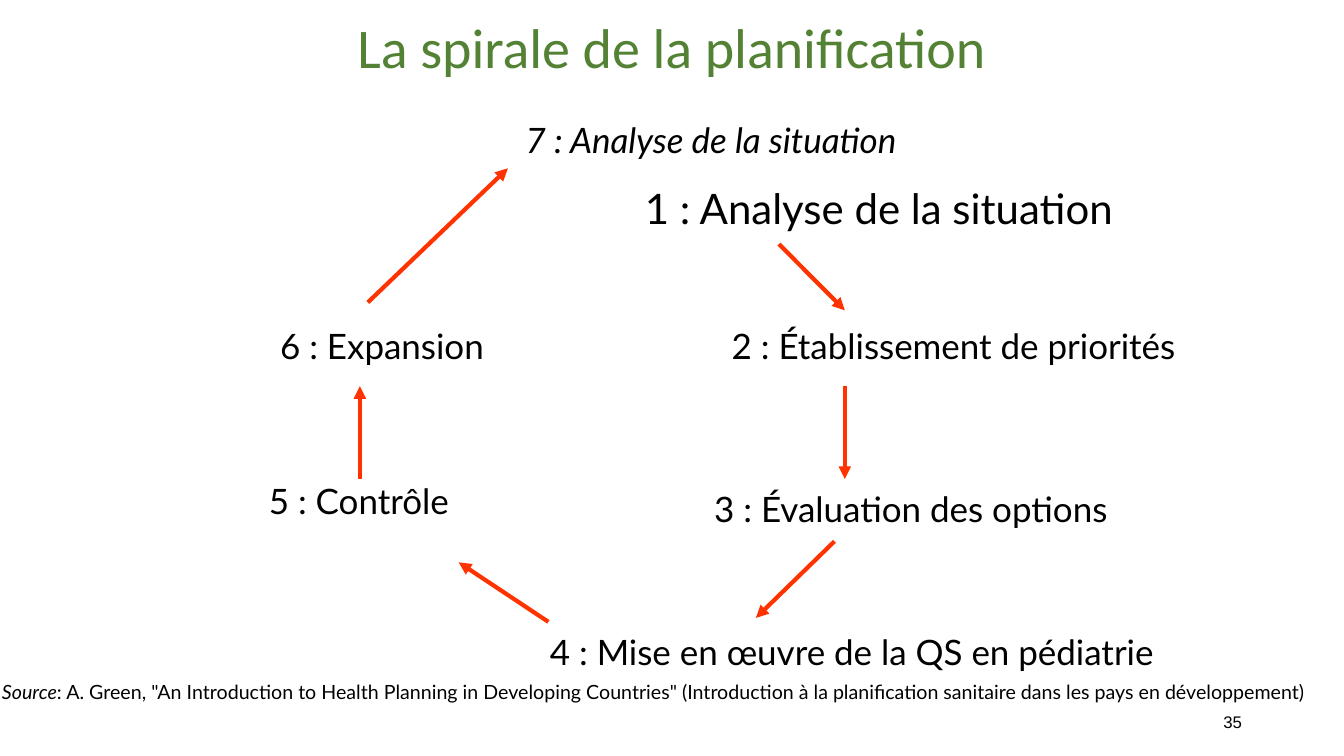
from lxml.etree import SubElement
from pptx import Presentation
from pptx.dml.color import RGBColor
from pptx.enum.shapes import MSO_CONNECTOR
from pptx.enum.text import MSO_ANCHOR, PP_ALIGN
from pptx.oxml.ns import qn
from pptx.util import Cm, Pt

TITLE = "La spirale de la planification"
# text, left, top, width, height (cm), size (pt), italic, alignment
STEPS = [
    ("1 : Analyse de la situation", 16, 4.47, 12.4, 1.52, 30, False, PP_ALIGN.LEFT),
    ("2 : Établissement de priorités", 18.19, 8.05, 11.9, 1.35, 25, False, PP_ALIGN.LEFT),
    ("3 : Évaluation des options", 17.75, 12.17, 10.6, 1.35, 25, False, PP_ALIGN.LEFT),
    ("4 : Mise en œuvre de la QS en pédiatrie", 13.61, 15.77, 16, 1.35, 25, False, PP_ALIGN.LEFT),
    ("5 : Contrôle", 6.1, 11.96, 5.89, 1.35, 25, False, PP_ALIGN.CENTER),
    ("6 : Expansion", 6.81, 8.05, 5.97, 1.35, 25, False, PP_ALIGN.LEFT),
    ("7 : Analyse de la situation", 13, 2.87, 10, 1.35, 25, True, PP_ALIGN.LEFT),
]
# from x, from y, to x, to y (cm)
ARROWS = [
    (19.63, 6.15, 21.29, 7.82),
    (21.29, 9.73, 21.29, 12.07),
    (21.03, 13.64, 19.05, 15.57),
    (13.82, 15.67, 11.56, 14.17),
    (9.07, 12.07, 9.07, 9.73),
    (9.27, 7.62, 12.8, 4.24),
]
SOURCE = ("Source", ': A. Green, "An Introduction to Health Planning in Developing Countries" '
          "(Introduction à la planification sanitaire dans les pays en développement)")
NUMBER = "35"
BLACK, GREEN, RED = "000000", "548235", "FF3300"


def color(code):
    return RGBColor.from_string(code)


def style(run, size, name="Lato", code=BLACK, italic=False):
    font = run.font
    font.size, font.name, font.italic = Pt(size), name, italic
    font.color.rgb = color(code)


def add_text(slide, text, left, top, width, height, align=PP_ALIGN.LEFT):
    """Add a wrapped text box and return its paragraph."""
    box = slide.shapes.add_textbox(Cm(left), Cm(top), Cm(width), Cm(height))
    box.text_frame.word_wrap = True
    para = box.text_frame.paragraphs[0]
    para.text, para.alignment = text, align
    return para


def add_arrow(slide, *ends):
    line = slide.shapes.add_connector(MSO_CONNECTOR.STRAIGHT, *map(Cm, ends))
    line.line.color.rgb = color(RED)
    line.line.width = Pt(3)
    SubElement(line.line._get_or_add_ln(), qn("a:tailEnd"), type="triangle")
    SubElement(line._element.spPr, qn("a:effectLst"))


def add_title(slide):
    title = slide.shapes.title
    title.left, title.top, title.width, title.height = Cm(7.92), Cm(-0.2), Cm(18), Cm(2.74)
    frame = title.text_frame
    frame.text, frame.vertical_anchor = TITLE, MSO_ANCHOR.MIDDLE
    para = frame.paragraphs[0]
    para.alignment = PP_ALIGN.CENTER
    style(para.runs[0], 40, "Calibri", GREEN)


def main():
    deck = Presentation()
    deck.slide_width, deck.slide_height = Cm(33.87), Cm(19.05)
    slide = deck.slides.add_slide(deck.slide_layouts[5])
    add_title(slide)

    for text, left, top, width, height, size, italic, align in STEPS:
        para = add_text(slide, text, left, top, width, height, align)
        style(para.runs[0], size, italic=italic)
    for ends in ARROWS:
        add_arrow(slide, *ends)

    para = add_text(slide, SOURCE[0], -0.2, 17.02, 34, 1.02)
    para.add_run().text = SOURCE[1]
    for run, italic in zip(para.runs, (True, False)):
        style(run, 14, italic=italic)

    para = add_text(slide, NUMBER, 23.93, 17.81, 7.62, 0.76, PP_ALIGN.RIGHT)
    style(para.runs[0], 12, "Arial")
    deck.save("out.pptx")


if __name__ == "__main__":
    main()
